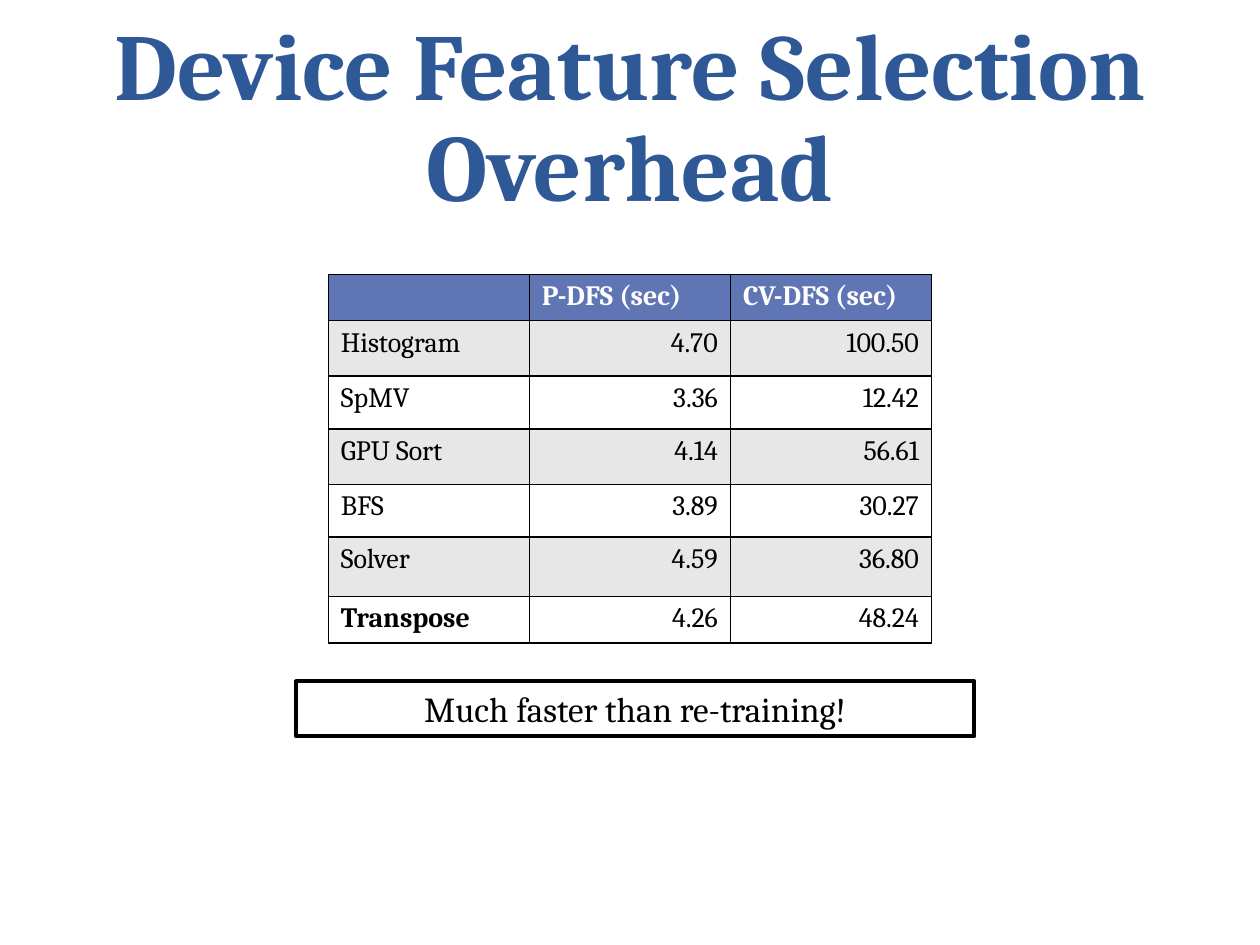
import lxml.etree
import pptx
import pptx.dml.color
import pptx.enum.shapes
import pptx.enum.text
import pptx.oxml.ns
import pptx.util

Pt = pptx.util.Pt
ALIGN = pptx.enum.text.PP_ALIGN
ANCHOR = pptx.enum.text.MSO_ANCHOR
qn = pptx.oxml.ns.qn

COLORS = {
    "title": "2F5897",
    "header": "6076B4",
    "band": "E7E7E7",
    "white": "FFFFFF",
    "black": "000000",
}

HEADER = ["", "P-DFS (sec)", "CV-DFS (sec)"]
TIMINGS = [
    ["Histogram", "4.70", "100.50"],
    ["SpMV", "3.36", "12.42"],
    ["GPU Sort", "4.14", "56.61"],
    ["BFS", "3.89", "30.27"],
    ["Solver", "4.59", "36.80"],
    ["Transpose", "4.26", "48.24"],
]
ROW_HEIGHTS = [25.2, 31.7, 30.2, 31.7, 30.2, 33.8, 26.6]
COLUMN_WIDTH = 114.9


class SlideBuilder:
    font_name = "Cambria"

    def __init__(self, page):
        self.page = page

    def color(self, name):
        return pptx.dml.color.RGBColor.from_string(COLORS[name])

    def set_text(self, para, text, size, color, bold=False, align=ALIGN.LEFT):
        para.alignment = align
        font = para.font
        font.name = self.font_name
        font.size = Pt(size)
        font.bold = bold
        font.color.rgb = self.color(color)
        if text:
            para.add_run().text = text
        else:
            end = lxml.etree.SubElement(para._p, qn("a:endParaRPr"), sz=str(size * 100))
            lxml.etree.SubElement(end, qn("a:latin"), typeface=self.font_name)

    def title(self, text, left, top, width, height):
        box = self.page.shapes.add_textbox(Pt(left), Pt(top), Pt(width), Pt(height))
        frame = box.text_frame
        frame.word_wrap = True
        frame.vertical_anchor = ANCHOR.BOTTOM
        para = frame.paragraphs[0]
        para.line_spacing = Pt(58)
        self.set_text(para, text, 54, "title", True, ALIGN.CENTER)

    def border(self, cell):
        properties = cell._tc.get_or_add_tcPr()
        for index, side in enumerate(("lnL", "lnR", "lnT", "lnB")):
            line = lxml.etree.Element(qn(f"a:{side}"), w=str(Pt(1)))
            fill = lxml.etree.SubElement(line, qn("a:solidFill"))
            lxml.etree.SubElement(fill, qn("a:srgbClr"), val=COLORS["black"])
            properties.insert(index, line)

    def table(self, rows, left, top, column_width, heights):
        columns = len(rows[0])
        table = self.page.shapes.add_table(
            len(rows), columns, Pt(left), Pt(top),
            Pt(column_width * columns), Pt(sum(heights)),
        ).table
        for column in table.columns:
            column.width = Pt(column_width)
        for row_index, (row, height) in enumerate(zip(rows, heights)):
            table.rows[row_index].height = Pt(height)
            is_header = row_index == 0
            fill = "header" if is_header else ("white", "band")[row_index % 2]
            for column_index, text in enumerate(row):
                cell = table.cell(row_index, column_index)
                cell.fill.solid()
                cell.fill.fore_color.rgb = self.color(fill)
                self.border(cell)
                is_number = column_index > 0 and not is_header
                self.set_text(
                    cell.text_frame.paragraphs[0], text, 16,
                    "white" if is_header else "black",
                    is_header or text == "Transpose",
                    ALIGN.RIGHT if is_number else ALIGN.LEFT,
                )

    def callout(self, text, left, top, width, height):
        box = self.page.shapes.add_shape(
            pptx.enum.shapes.MSO_SHAPE.RECTANGLE,
            Pt(left), Pt(top), Pt(width), Pt(height),
        )
        box.shadow.inherit = False
        box.fill.solid()
        box.fill.fore_color.rgb = self.color("white")
        box.line.color.rgb = self.color("black")
        box.line.width = Pt(2.25)
        frame = box.text_frame
        frame.word_wrap = True
        frame.vertical_anchor = ANCHOR.TOP
        self.set_text(frame.paragraphs[0], text, 20, "black", align=ALIGN.CENTER)


def main():
    deck = pptx.Presentation()
    deck.slide_width = Pt(720)
    deck.slide_height = Pt(540)
    builder = SlideBuilder(deck.slides.add_slide(deck.slide_layouts[6]))
    builder.title("Device Feature Selection Overhead", 36, 42, 648, 87.6)
    builder.table([HEADER] + TIMINGS, 187.6, 156.8, COLUMN_WIDTH, ROW_HEIGHTS)
    builder.callout("Much faster than re-training!", 169.2, 389.3, 387.6, 31.5)
    deck.save("out.pptx")


if __name__ == "__main__":
    main()
